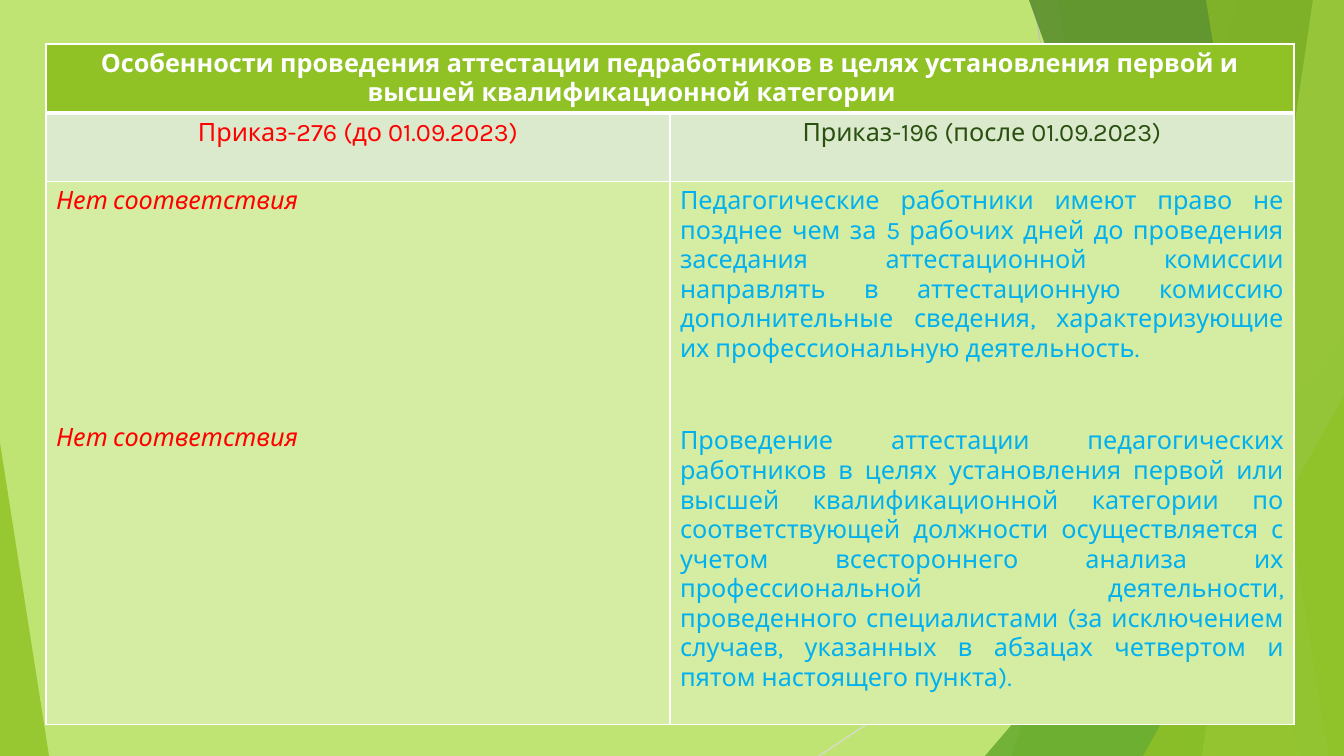
"""Build the slide comparing two attestation orders in a table."""
from lxml.etree import SubElement
from pptx import Presentation
from pptx.dml.color import RGBColor
from pptx.enum.shapes import MSO_CONNECTOR, MSO_SHAPE
from pptx.enum.text import PP_ALIGN
from pptx.oxml import parse_xml
from pptx.oxml.ns import nsdecls, qn
from pptx.util import Pt

PX = 12192000 / 1344
WIDE, HIGH = 1344, 756
WHITE = RGBColor(0xFF, 0xFF, 0xFF)
LIME = RGBColor(0xC0, 0xE4, 0x74)
GREEN = RGBColor(0x90, 0xC2, 0x26)
LEAF = RGBColor(0x54, 0xA0, 0x21)
MOSS = RGBColor(0x3F, 0x78, 0x19)
SAGE = RGBColor(0xDB, 0xE9, 0xCD)
PALE = RGBColor(0xD5, 0xED, 0xA2)
RED = RGBColor(0xFF, 0x00, 0x00)
DARK = RGBColor(0x2A, 0x50, 0x10)
BLUE = RGBColor(0x00, 0xB0, 0xF0)
GREY = RGBColor(0xBF, 0xBF, 0xBF)
MIST = RGBColor(0xD9, 0xD9, 0xD9)


def emu(*sizes):
    return [round(size * PX) for size in sizes]


def tint(shape, color, alpha):
    shape.shadow.inherit = False
    shape.line.fill.background()
    shape.fill.solid()
    shape.fill.fore_color.rgb = color
    tone = shape.fill._xPr.find(qn("a:solidFill"))[0]
    SubElement(tone, qn("a:alpha"), val=str(alpha * 1000))


deck = Presentation()
deck.slide_width, deck.slide_height = emu(WIDE, HIGH)
slide = deck.slides.add_slide(deck.slide_layouts[6])
slide.background.fill.solid()
slide.background.fill.fore_color.rgb = LIME
shapes = slide.shapes

for ends, color in [((1033, 0, 1167, HIGH), GREY), ((WIDE, 406, 819, HIGH), MIST)]:
    line = shapes.add_connector(MSO_CONNECTOR.STRAIGHT, *emu(*ends))
    line.line.color.rgb = color
    line.line.width = Pt(0.75)
    SubElement(line._element.spPr, qn("a:effectLst"))

FACETS = [
    ("band", (1238, 1012), GREEN, 30),
    ("band", (1058, 1192), GREEN, 20),
    ("peak", (985, 336, 359, 420, 1), LEAF, 72),
    ("band", (1029, 1301), MOSS, 70),
    ("band", (1313, 1202), LIME, 70),
    ("band", (1206, 1329), GREEN, 65),
    ("peak", (1143, 396, 201, 360, 1), GREEN, 80),
    ("peak", (0, 443, 49, 313, 0), GREEN, 85),
]
for kind, place, color, alpha in FACETS:
    if kind == "band":
        top, base = place
        pen = shapes.build_freeform(top, 0, scale=PX)
        pen.add_line_segments([(WIDE, 0), (WIDE, HIGH), (base, HIGH)], close=True)
        facet = pen.convert_to_shape()
    else:
        facet = shapes.add_shape(MSO_SHAPE.ISOSCELES_TRIANGLE, *emu(*place[:4]))
        facet.adjustments[0] = place[4]
    tint(facet, color, alpha)

ROWS = [69, 68, 543]
table = shapes.add_table(3, 2, *emu(46, 44, 1248, sum(ROWS))).table
for row, size in zip(table.rows, ROWS):
    row.height = emu(size)[0]
for col in table.columns:
    col.width = emu(624)[0]
table.cell(0, 0).merge(table.cell(0, 1))

for r, fill in enumerate([GREEN, SAGE, PALE]):
    for cell in table.rows[r].cells:
        props = cell._tc.get_or_add_tcPr()
        for side in "LRTB":
            thick = (r, side) in [(0, "B"), (1, "T")]
            props.append(parse_xml(
                f'<a:ln{side} {nsdecls("a")} w="{Pt(3 if thick else 1)}">'
                f'<a:solidFill><a:srgbClr val="{WHITE}"/></a:solidFill></a:ln{side}>'))
        cell.fill.solid()
        cell.fill.fore_color.rgb = fill

NONE = "Нет соответствия"
RIGHT = (
    "Педагогические работники имеют право не позднее чем за 5 рабочих дней "
    "до проведения заседания аттестационной комиссии направлять в аттестационную "
    "комиссию дополнительные сведения, характеризующие их профессиональную деятельность.")
REVIEW = (
    "Проведение аттестации педагогических работников в целях установления первой "
    "или высшей квалификационной категории по соответствующей должности "
    "осуществляется с учетом всестороннего анализа их профессиональной деятельности, "
    "проведенного специалистами (за исключением случаев, указанных в абзацах "
    "четвертом и пятом настоящего пункта).")
TITLE = ("Особенности проведения аттестации педработников в целях установления "
         "первой и высшей квалификационной категории \t\t")
TEXTS = [
    (0, 0, [TITLE], WHITE, PP_ALIGN.CENTER, 0),
    (1, 0, ["Приказ-276 (до 01.09.2023)"], RED, PP_ALIGN.CENTER, 0),
    (1, 1, ["Приказ-196 (после 01.09.2023)"], DARK, PP_ALIGN.CENTER, 0),
    (2, 0, [NONE, NONE], RED, PP_ALIGN.LEFT, 148),
    (2, 1, [RIGHT, REVIEW], BLUE, PP_ALIGN.JUSTIFY, 45),
]
for r, c, parts, color, align, gap in TEXTS:
    frame = table.cell(r, c).text_frame
    frame.text = "\n".join(parts)
    for i, para in enumerate(frame.paragraphs):
        para.alignment = align
        para.space_before = Pt(gap * i)
        for run in para.runs:
            font = run.font
            font.name, font.size = "Karla", Pt(18)
            font.bold, font.italic = r == 0, (r, c) == (2, 0)
            font.color.rgb = color

deck.save("out.pptx")
